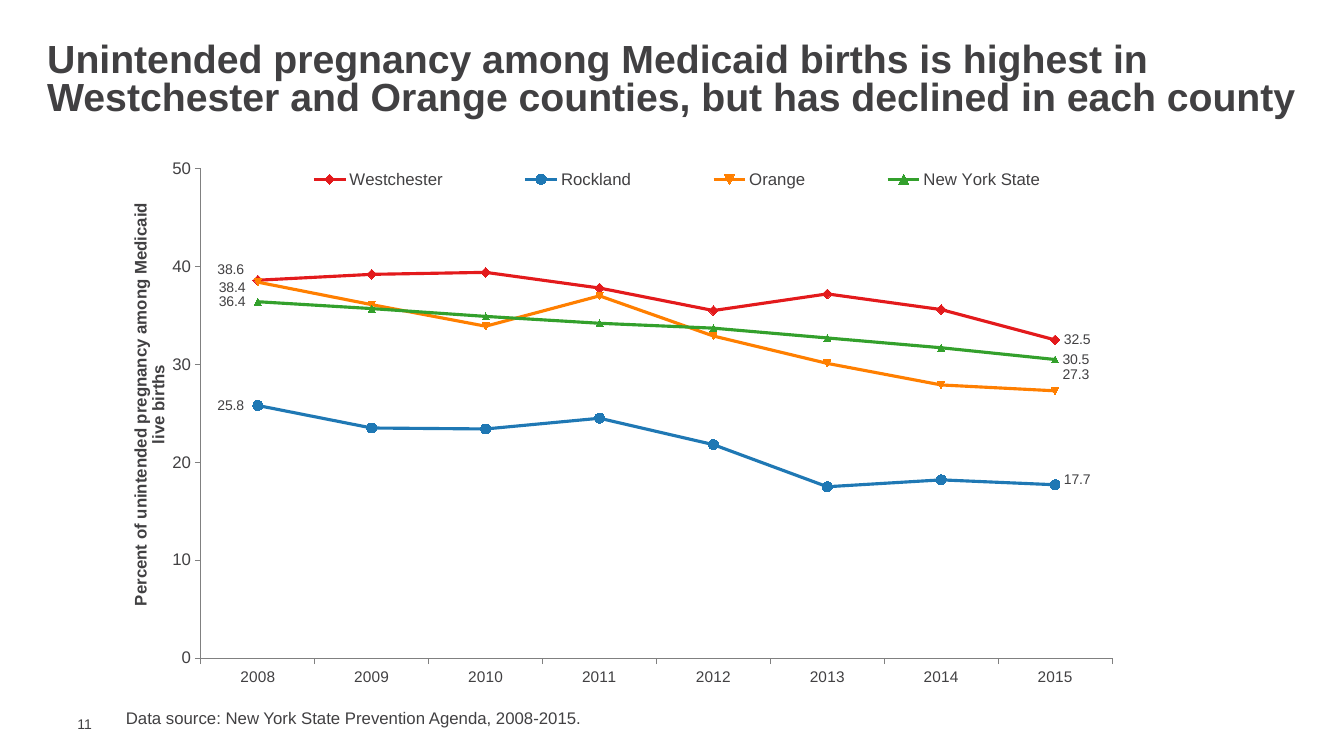
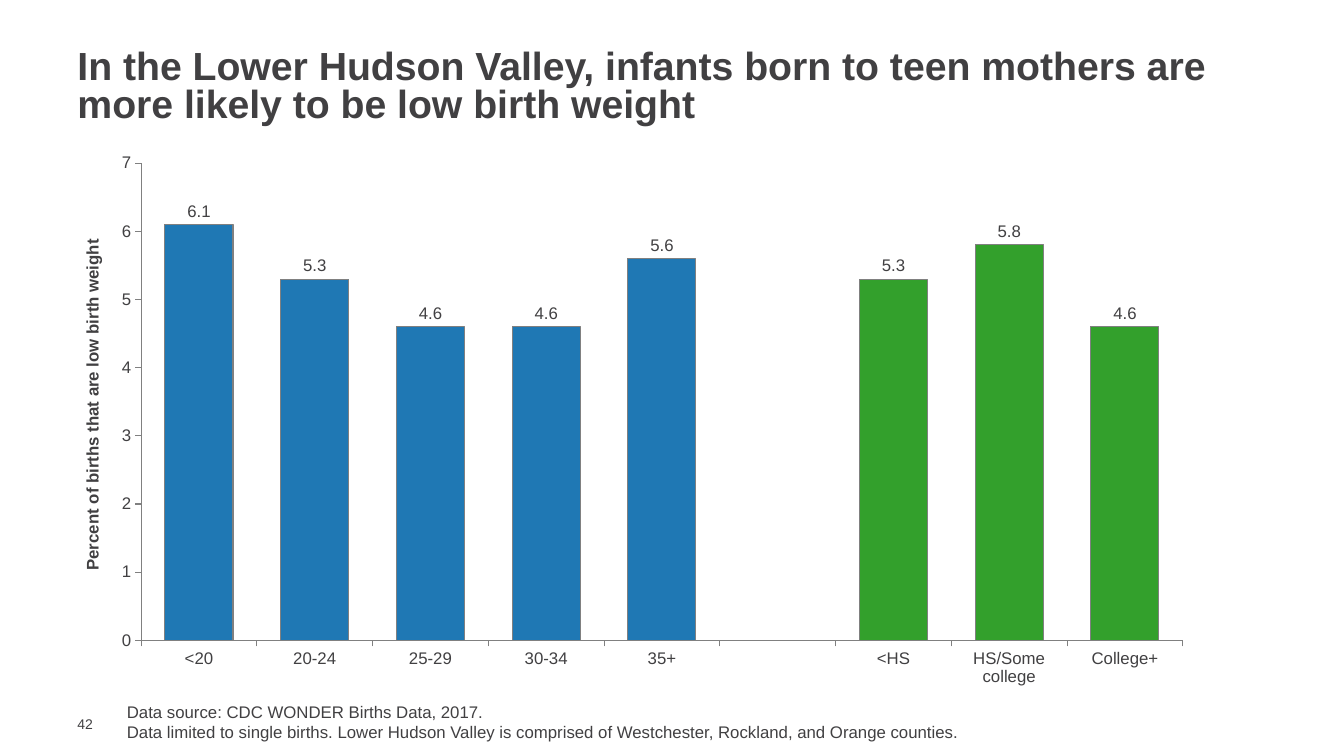
from lxml import etree
from pptx import Presentation
from pptx.chart.data import CategoryChartData
from pptx.dml.color import RGBColor
from pptx.enum.chart import (XL_CHART_TYPE, XL_LABEL_POSITION, XL_LEGEND_POSITION,
                             XL_MARKER_STYLE, XL_TICK_MARK)
from pptx.enum.text import MSO_ANCHOR
from pptx.oxml.ns import qn
from pptx.util import Inches, Pt

LINE, COLUMN = XL_CHART_TYPE.LINE_MARKERS, XL_CHART_TYPE.COLUMN_CLUSTERED
LEFT, RIGHT = XL_LABEL_POSITION.LEFT, XL_LABEL_POSITION.RIGHT
OUTSIDE_END = XL_LABEL_POSITION.OUTSIDE_END
DIAMOND, CIRCLE = XL_MARKER_STYLE.DIAMOND, XL_MARKER_STYLE.CIRCLE
AUTO = XL_MARKER_STYLE.AUTOMATIC
TICK_OUT, TICK_NONE = XL_TICK_MARK.OUTSIDE, XL_TICK_MARK.NONE
TOP, MIDDLE = MSO_ANCHOR.TOP, MSO_ANCHOR.MIDDLE
LEGEND_TOP = XL_LEGEND_POSITION.TOP

FONT = "Arial"
TEXT, AXIS = "414042", "808080"
RED, BLUE, ORANGE, GREEN = "E31A1C", "1F78B4", "FF7F00", "33A02C"


def rgb(value):
    return RGBColor.from_string(value)


def style_font(font, size, bold=False):
    font.name = FONT
    font.size = Pt(size)
    font.bold = bold
    font.color.rgb = rgb(TEXT)


def style_line(line, color, width):
    line.color.rgb = rgb(color)
    line.width = Pt(width)


def add_text(slide, box, lines, size, bold=False, anchor=TOP, spacing=None):
    tf = slide.shapes.add_textbox(*map(Inches, box)).text_frame
    tf.word_wrap = True
    tf.vertical_anchor = anchor
    for i, line in enumerate(lines):
        p = tf.add_paragraph() if i else tf.paragraphs[0]
        if spacing:
            p.line_spacing = spacing
        r = p.add_run()
        r.text = line
        style_font(r.font, size, bold)
    return tf


def add_frame(prs, title, title_box, number, source, source_box):
    slide = prs.slides.add_slide(prs.slide_layouts[6])
    add_text(slide, title_box, [title], 28, True, MIDDLE, 0.8)
    tf = add_text(slide, (0.67, 7.1, 0.43, 0.17), [number], 10, anchor=MIDDLE)
    tf.margin_top = tf.margin_right = tf.margin_bottom = 0
    add_text(slide, source_box, source, 12)
    return slide


def set_layout(parent, index, **settings):
    for old in parent.findall(qn("c:layout")):
        parent.remove(old)
    layout = etree.Element(qn("c:layout"))
    manual = etree.SubElement(layout, qn("c:manualLayout"))
    for name, value in settings.items():
        etree.SubElement(manual, qn(f"c:{name}")).set("val", str(value))
    parent.insert(index, layout)


def add_chart(slide, kind, box, categories, series, plot_box, size):
    data = CategoryChartData()
    data.categories = categories
    for name, values in series:
        data.add_series(name, values)
    chart = slide.shapes.add_chart(kind, *map(Inches, box), data).chart
    chart.has_title = False
    chart.has_legend = False
    style_font(chart.font, size)
    x, y, w, h = plot_box
    plot_area = chart._chartSpace.find(".//" + qn("c:plotArea"))
    set_layout(plot_area, 0, layoutTarget="inner", xMode="edge", yMode="edge",
               x=x, y=y, w=w, h=h)
    return chart


def style_axes(chart, category_size, title, title_at, maximum, step):
    for axis, size in ((chart.category_axis, category_size), (chart.value_axis, 12)):
        axis.has_major_gridlines = False
        axis.major_tick_mark = TICK_OUT
        axis.minor_tick_mark = TICK_NONE
        style_font(axis.tick_labels.font, size)
        style_line(axis.format.line, AXIS, 0.75)
    axis = chart.value_axis
    axis.minimum_scale, axis.maximum_scale, axis.major_unit = 0, maximum, step
    axis.tick_labels.number_format = "0"
    axis.tick_labels.number_format_is_linked = False
    r = axis.axis_title.text_frame.paragraphs[0].add_run()
    r.text = title
    style_font(r.font, 12, True)
    element = axis.axis_title._element
    body = element.find(".//" + qn("a:bodyPr"))
    body.set("rot", "-5400000")
    body.set("vert", "horz")
    set_layout(element, 1, xMode="edge", yMode="edge", x=title_at[0], y=title_at[1])


def label_point(series, index, position, dx, dy):
    label = series.points[index].data_label
    label.position = position
    style_font(label.font, 10)
    if dx or dy:
        element = next(e for e in series.data_labels._element.findall(qn("c:dLbl"))
                       if e.find(qn("c:idx")).get("val") == str(index))
        set_layout(element, 1, x=dx, y=dy)


def add_legend(chart, x, y, w, h):
    chart.has_legend = True
    chart.legend.position = LEGEND_TOP
    chart.legend.include_in_layout = False
    style_font(chart.legend.font, 12)
    set_layout(chart.legend._element, 1, xMode="edge", yMode="edge", x=x, y=y, w=w, h=h)


def add_pregnancy_slide(prs):
    slide = add_frame(
        prs,
        "Unintended pregnancy among Medicaid births is highest in Westchester "
        "and Orange counties, but has declined in each county",
        (0.37, 0.38, 12.79, 0.85), "11",
        ["Data source: New York State Prevention Agenda, 2008-2015."],
        (1.15, 6.97, 9.92, 0.3))
    regions = [
        ("Westchester", [38.6, 39.2, 39.4, 37.8, 35.5, 37.2, 35.6, 32.5],
         RED, DIAMOND, 7, -0.02, 0),
        ("Rockland", [25.8, 23.5, 23.4, 24.5, 21.8, 17.5, 18.2, 17.7],
         BLUE, CIRCLE, 7, 0, -0.01),
        ("Orange", [38.4, 36.1, 33.9, 37, 32.9, 30.1, 27.9, 27.3],
         ORANGE, AUTO, 5, 0.01, -0.03),
        ("New York State", [36.4, 35.7, 34.9, 34.2, 33.7, 32.7, 31.7, 30.5],
         GREEN, AUTO, 5, 0, 0),
    ]
    years = [str(year) for year in range(2008, 2016)]
    chart = add_chart(slide, LINE, (1.16, 1.44, 9.92, 5.42), years,
                      [region[:2] for region in regions],
                      (0.084, 0.043, 0.911, 0.896), 10)
    style_axes(chart, 11, "Percent of unintended pregnancy among Medicaid live births",
               (0.01, 0.1), 50, 10)
    add_legend(chart, 0.12, 0.035, 0.88, 0.055)
    for series, region in zip(chart.plots[0].series, regions):
        color, marker, size, first_dy, last_dy = region[2:]
        series.smooth = False
        style_line(series.format.line, color, 2.25)
        series.marker.style = marker
        series.marker.size = size
        series.marker.format.fill.solid()
        series.marker.format.fill.fore_color.rgb = rgb(color)
        style_line(series.marker.format.line, color, 0.75)
        series.data_labels.show_value = False
        label_point(series, 0, LEFT, -0.005, first_dy)
        label_point(series, len(years) - 1, RIGHT, 0, last_dy)


def add_birth_weight_slide(prs):
    slide = add_frame(
        prs,
        "In the Lower Hudson Valley, infants born to teen mothers are more likely "
        "to be low birth weight",
        (0.67, 0.45, 12, 0.85), "42",
        ["Data source: CDC WONDER Births Data, 2017.",
         "Data limited to single births. Lower Hudson Valley is comprised of "
         "Westchester, Rockland, and Orange counties."],
        (1.16, 6.91, 9.92, 0.5))
    ages = ["<20", "20-24", "25-29", "30-34", "35+"]
    education = ["<HS", "HS/Some college", "College+"]
    categories = ages + [""] + education
    values = [6.1, 5.3, 4.6, 4.6, 5.6, None, 5.3, 5.8, 4.6]
    chart = add_chart(slide, COLUMN, (0.66, 1.48, 12.33, 5.57), categories,
                      [("Series 1", values)], (0.06, 0.025, 0.838, 0.85), 12)
    style_axes(chart, 12, "Percent of births that are low birth weight",
               (0.01, 0.155), 7, 1)
    plot = chart.plots[0]
    plot.gap_width = 70
    plot.vary_by_categories = False
    series = plot.series[0]
    education_points = [series.points[i] for i in range(len(ages) + 1, len(categories))]
    for bar, color in [(series, BLUE)] + [(point, GREEN) for point in education_points]:
        bar.format.fill.solid()
        bar.format.fill.fore_color.rgb = rgb(color)
        style_line(bar.format.line, AXIS, 0.75)
    labels = series.data_labels
    labels.show_value = True
    labels.number_format = "#,##0.0"
    labels.number_format_is_linked = False
    labels.position = OUTSIDE_END
    style_font(labels.font, 12)


def main():
    prs = Presentation()
    prs.slide_width, prs.slide_height = Inches(13.33), Inches(7.5)
    add_pregnancy_slide(prs)
    add_birth_weight_slide(prs)
    prs.save("out.pptx")


if __name__ == "__main__":
    main()
